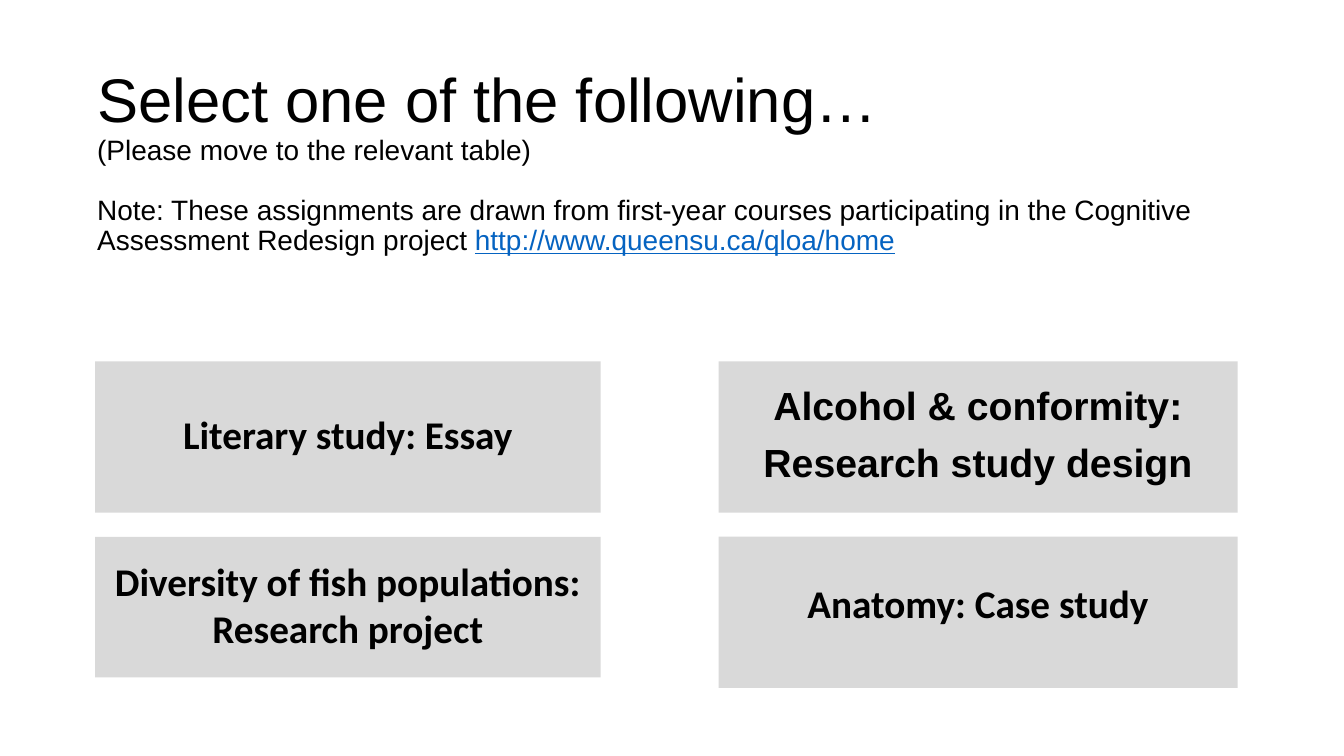
from pptx import Presentation
from pptx import util as u
from pptx.dml.color import RGBColor
from pptx.enum import shapes, text

BLACK = RGBColor(0x00, 0x00, 0x00)
PANEL_GREY = RGBColor(0xD9, 0xD9, 0xD9)
LINK_BLUE = RGBColor(0x05, 0x63, 0xC1)

HEADING = "Select one of the following…"
INSTRUCTION = "(Please move to the relevant table)"
NOTE = ("Note: These assignments are drawn from first-year courses participating "
        "in the Cognitive Assessment Redesign project ")
LINK = "http://www.queensu.ca/qloa/home"

COLUMNS = [(1.89, 10.03), (14.26, 10.3)]
ROWS = [7.17, 10.65]

ASSIGNMENTS = [
    dict(column=0, row=0, height=3, label_offset=0.93, label_height=1.04,
         lines=["Literary study: Essay"], font="Calibri"),
    dict(column=1, row=0, height=3, label_offset=0.46, label_height=2.29,
         lines=["Alcohol & conformity:", "Research study design"],
         font="Arial", line_spacing=0.9),
    dict(column=0, row=1, height=2.79, label_offset=0.35, label_height=1.99,
         lines=["Diversity of fish populations: Research project"], font="Calibri"),
    dict(column=1, row=1, height=3, label_offset=0.8, label_height=1.04,
         lines=["Anatomy: Case study"], font="Calibri"),
]


def add_text_box(slide, left, top, width, height):
    box = slide.shapes.add_textbox(*map(u.Inches, (left, top, width, height)))
    box.text_frame.word_wrap = True
    return box.text_frame


def add_paragraphs(frame, lines, sizes, gaps, font, bold=False,
                   alignment=None, line_spacing=None):
    for index, (line, size, gap) in enumerate(zip(lines, sizes, gaps)):
        paragraph = frame.add_paragraph() if index else frame.paragraphs[0]
        paragraph.add_run().text = line
        paragraph.alignment = alignment
        paragraph.line_spacing = line_spacing
        paragraph.space_before = u.Pt(gap)
        paragraph.font.name = font
        paragraph.font.size = u.Pt(size)
        paragraph.font.bold = bold
        paragraph.font.color.rgb = BLACK
    return paragraph


def add_title(slide):
    frame = add_text_box(slide, 1.83, 0.8, 23, 4.87)
    frame.vertical_anchor = text.MSO_ANCHOR.MIDDLE
    note = add_paragraphs(frame, [HEADING, INSTRUCTION, NOTE], [88, 40, 40],
                          [0, 0, 42], "Arial", line_spacing=0.9)
    link = note.add_run()
    link.text = LINK
    link.font.underline = True
    link.font.color.rgb = LINK_BLUE


def add_assignment(slide, assignment):
    left, width = COLUMNS[assignment["column"]]
    top = ROWS[assignment["row"]]
    panel = slide.shapes.add_shape(
        shapes.MSO_SHAPE.RECTANGLE,
        *map(u.Inches, (left, top, width, assignment["height"])))
    panel.shadow.inherit = False
    panel.fill.solid()
    panel.fill.fore_color.rgb = PANEL_GREY
    panel.line.fill.background()

    lines = assignment["lines"]
    frame = add_text_box(slide, left, top + assignment["label_offset"],
                         width, assignment["label_height"])
    add_paragraphs(frame, lines, [56] * len(lines), [0, 20], assignment["font"],
                   bold=True, alignment=text.PP_ALIGN.CENTER,
                   line_spacing=assignment.get("line_spacing"))


def main():
    presentation = Presentation()
    presentation.slide_width = u.Inches(26.67)
    presentation.slide_height = u.Inches(15)
    slide = presentation.slides.add_slide(presentation.slide_layouts[6])
    add_title(slide)
    for assignment in ASSIGNMENTS:
        add_assignment(slide, assignment)
    presentation.save("out.pptx")


if __name__ == "__main__":
    main()
